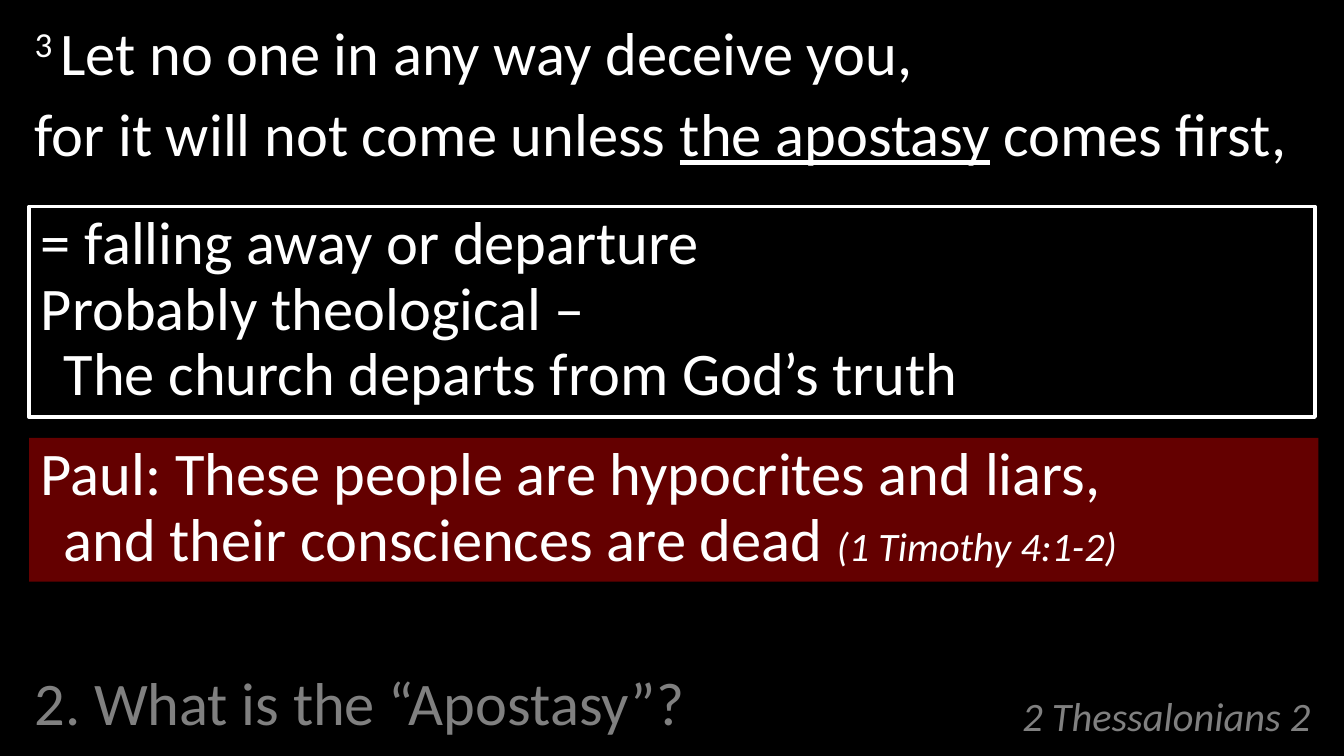
from dataclasses import dataclass
from pptx import Presentation
from pptx.dml.color import RGBColor
from pptx.enum import shapes, text
from pptx.util import Pt


@dataclass(frozen=True)
class Theme:
    font: str = "Calibri"
    black: str = "000000"
    white: str = "FFFFFF"
    grey: str = "808080"
    red: str = "640000"
    big: int = 36
    small: int = 24


class Deck:
    def __init__(self, theme):
        self.theme = theme
        self.file = Presentation()
        self.file.slide_width, self.file.slide_height = Pt(800), Pt(450)
        self.slide = self.file.slides.add_slide(self.file.slide_layouts[6])
        self.paint(self.slide.background.fill, theme.black)

    def paint(self, fill, color):
        fill.solid()
        fill.fore_color.rgb = RGBColor.from_string(color)

    def span(self, para, words, color, size=None, italic=False, under=False, raised=False):
        run = para.add_run()
        run.text = words
        font = run.font
        font.name, font.size = self.theme.font, Pt(size or self.theme.big)
        font.italic, font.underline = italic, under
        font.color.rgb = RGBColor.from_string(color)
        if raised:
            run._r.get_or_add_rPr().set("baseline", "30000")

    def fill_text(self, shape, paras, color, lead, hang=0, gap=0, anchor="TOP", align="LEFT"):
        frame = shape.text_frame
        frame.word_wrap = True
        frame.vertical_anchor = text.MSO_ANCHOR[anchor]
        for i, lines in enumerate(paras):
            para = frame.add_paragraph() if i else frame.paragraphs[0]
            para.alignment = text.PP_ALIGN[align]
            para.line_spacing = lead
            para.space_before = Pt(gap if i else 0)
            props = para._p.get_or_add_pPr()
            props.set("marL", str(Pt(hang)))
            props.set("indent", str(-Pt(hang)))
            for j, runs in enumerate(lines):
                if j:
                    para.add_line_break()
                for words, style in runs:
                    self.span(para, words, color, **style)

    def label(self, box, paras, color, lead=0.95, **style):
        shape = self.slide.shapes.add_textbox(*map(Pt, box))
        self.fill_text(shape, paras, color, lead, **style)

    def panel(self, box, paras, fill, line=None):
        shape = self.slide.shapes.add_shape(shapes.MSO_SHAPE.RECTANGLE, *map(Pt, box))
        shape.shadow.inherit = False
        self.paint(shape.fill, fill)
        if line:
            self.paint(shape.line.fill, line)
            shape.line.width = Pt(2)
        else:
            shape.line.fill.background()
        self.fill_text(shape, paras, self.theme.white, 0.9, hang=13.5)


def main():
    theme = Theme()
    deck = Deck(theme)
    cite = {"size": theme.small, "italic": True}
    deck.label((508.5, 400.5, 278.5, 43), [[[("2 Thessalonians 2", cite)]]],
               theme.grey, lead=0.8, anchor="BOTTOM", align="RIGHT")
    verse = [
        [[("3 ", {"raised": True}), ("Let no one in any way deceive you,", {})]],
        [[("for it will not come unless ", {}), ("the apostasy", {"under": True}),
          (" comes first,", {})]],
    ]
    deck.label((13.5, 8.5, 773.5, 381), verse, theme.white, hang=27, gap=7.2)
    deck.label((13.5, 400.5, 584.5, 43), [[[("2. What is the “Apostasy”?", {})]]],
               theme.grey, hang=27, anchor="BOTTOM")
    meaning = [
        [[("= falling away or departure", {})]],
        [[("Probably theological –", {})],
         [("The church departs from God’s truth", {})]],
    ]
    deck.panel((17.3, 123, 765.5, 125.3), meaning, theme.black, theme.white)
    rebuke = [
        [[("Paul: These people are hypocrites and liars,", {})],
         [("and their consciences are dead ", {}), ("(1 Timothy 4:1-2)", cite)]],
    ]
    deck.panel((17.3, 260.6, 767.5, 85.7), rebuke, theme.red)
    deck.file.save("out.pptx")


if __name__ == "__main__":
    main()
